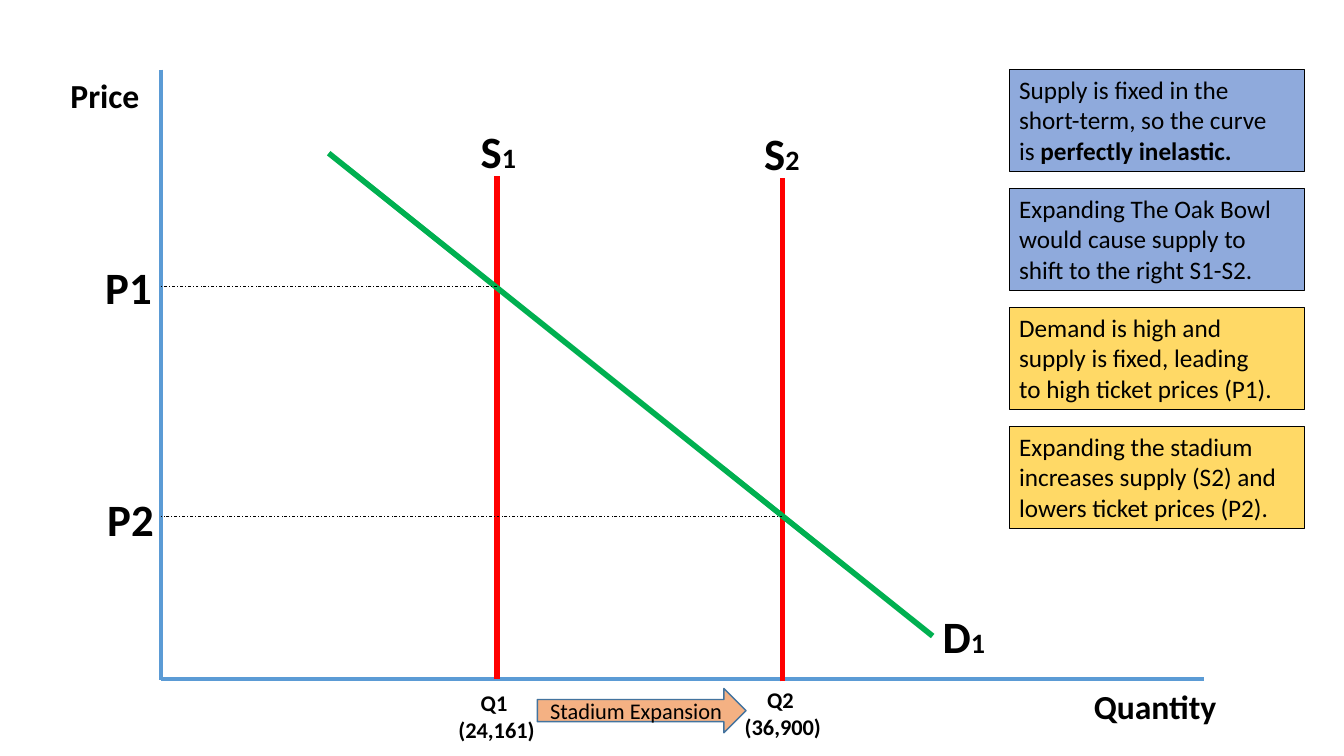
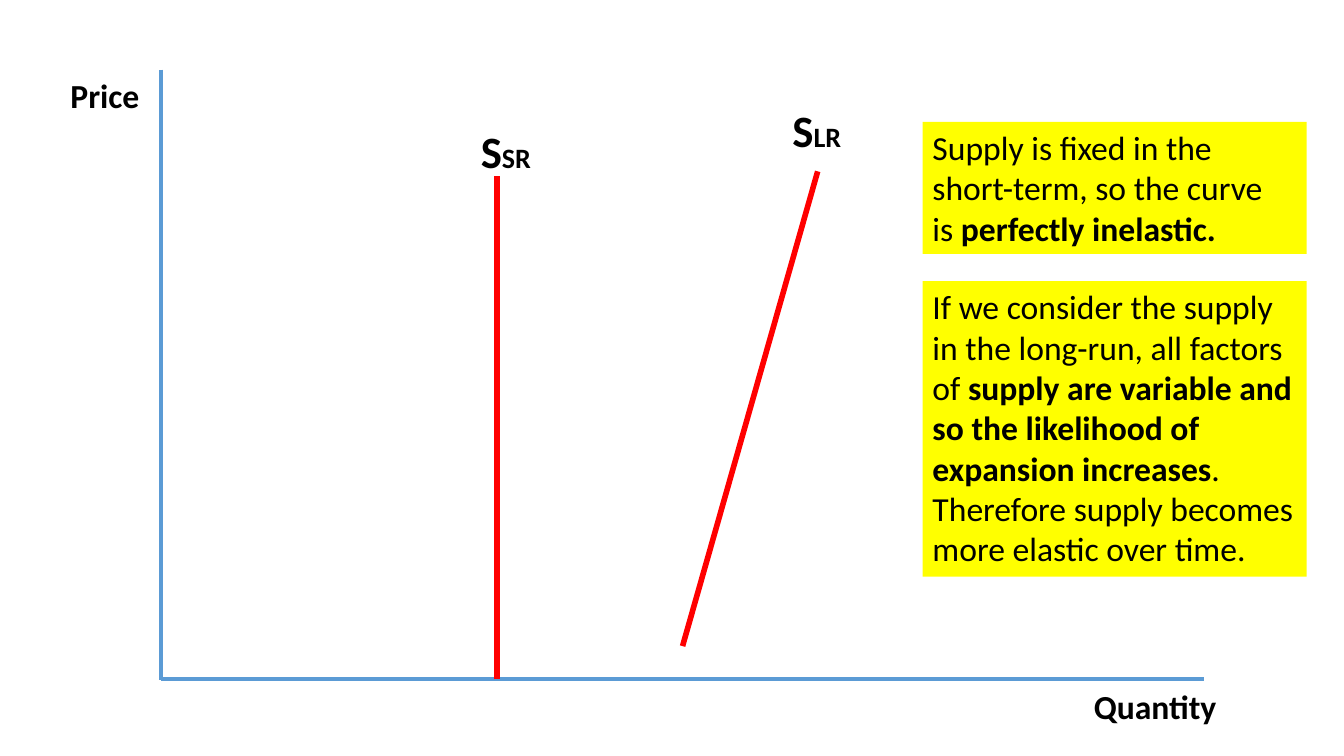
from pptx import Presentation
from pptx.dml.color import RGBColor
from pptx.enum.dml import MSO_LINE
from pptx.enum.shapes import MSO_CONNECTOR, MSO_SHAPE
from pptx.enum.text import MSO_ANCHOR, MSO_AUTO_SIZE, PP_ALIGN
from pptx.oxml.ns import qn
from pptx.util import Inches, Pt
from lxml import etree

STRAIGHT = MSO_CONNECTOR.STRAIGHT
RECT, RIGHT_ARROW = MSO_SHAPE.RECTANGLE, MSO_SHAPE.RIGHT_ARROW
LEFT, CENTER = PP_ALIGN.LEFT, PP_ALIGN.CENTER
TOP, MIDDLE = MSO_ANCHOR.TOP, MSO_ANCHOR.MIDDLE
GROW, FIXED = MSO_AUTO_SIZE.SHAPE_TO_FIT_TEXT, MSO_AUTO_SIZE.NONE
DASH_DOT = MSO_LINE.DASH_DOT

FONT = "Calibri"
BLACK = RGBColor(0x00, 0x00, 0x00)
AXIS_BLUE = RGBColor(0x5B, 0x9B, 0xD5)
SUPPLY_RED = RGBColor(0xFF, 0x00, 0x00)
DEMAND_GREEN = RGBColor(0x00, 0xB0, 0x50)
ARROW_ORANGE = RGBColor(0xF4, 0xB1, 0x83)
ARROW_EDGE = RGBColor(0x43, 0x73, 0x9E)
NOTE_BLUE = RGBColor(0x8F, 0xAA, 0xDC)
NOTE_GOLD = RGBColor(0xFF, 0xD9, 0x66)
NOTE_YELLOW = RGBColor(0xFF, 0xFF, 0x00)

AXIS_X, AXIS_TOP, AXIS_Y, AXIS_RIGHT = 1.6, 0.69, 6.74, 11.94
Q1_X, Q2_X = 4.93, 7.76
P1_Y, P2_Y = 2.84, 5.12
DEMAND = ((9.25, 6.31), (3.26, 1.52))
LONG_RUN = ((6.77, 6.41), (8.11, 1.7))

INELASTIC = [("Supply is fixed in the\nshort-term, so the curve\nis ", False),
             ("perfectly inelastic.", True)]
MARKET_NOTES = [
    (NOTE_BLUE, INELASTIC),
    (NOTE_BLUE, [("Expanding The Oak Bowl would cause supply to shift to the right S1-S2.", False)]),
    (NOTE_GOLD, [("Demand is high and\nsupply is fixed, leading\nto high ticket prices (P1).", False)]),
    (NOTE_GOLD, [("Expanding the stadium\nincreases supply (S2) and lowers ticket prices (P2).", False)]),
]
LONG_RUN_NOTES = [
    (1.21, 1.31, INELASTIC),
    (2.79, 2.93, [("If we consider the supply in the long-run, all factors of ", False),
                  ("supply are variable and so the likelihood of expansion increases", True),
                  (". Therefore supply becomes more elastic over time.", False)]),
]
MARKET_CURVES = [("S", "1", 4.67, 1.18, 0.56), ("S", "2", 7.48, 1.2, 0.56),
                 ("D", "1", 9.25, 5.99, 0.63)]
SUPPLY_CURVES = [("S", "SR", 4.67, 1.18, 0.71), ("S", "LR", 7.76, 0.97, 0.69)]
PRICES = [("P1", 0.94, 2.53, Q1_X, P1_Y), ("P2", 0.96, 4.83, Q2_X, P2_Y)]
QUANTITIES = [("Q1 \n(24,161)", 4.44, 6.79), ("Q2 \n(36,900)", 7.28, 6.76)]


def write(shape, runs, align=LEFT, anchor=TOP, wrap=True, fit=GROW):
    tf = shape.text_frame
    tf.word_wrap, tf.auto_size, tf.vertical_anchor = wrap, fit, anchor
    p = tf.paragraphs[0]
    p.alignment = align
    for text, size, bold in runs:
        for i, line in enumerate(text.split("\n")):
            if i:
                p.add_line_break()
            r = p.add_run()
            r.text = line
            r.font.name, r.font.size, r.font.bold = FONT, Pt(size), bold
            r.font.color.rgb = BLACK


def add_label(s, box, *runs, align=LEFT):
    shape = s.shapes.add_textbox(*map(Inches, box))
    write(shape, [(text, size, True) for text, size in runs], align=align, wrap=False)


def add_box(s, box, fill, runs, kind=RECT, edge=None, width=0.75, **text_format):
    shape = s.shapes.add_shape(kind, *map(Inches, box))
    shape.shadow.inherit = False
    shape.fill.solid()
    shape.fill.fore_color.rgb = fill
    if edge is None:
        shape.line.fill.background()
    else:
        shape.line.color.rgb = edge
        shape.line.width = Pt(width)
    write(shape, runs, **text_format)


def add_line(s, start, end, color, width, dash=None):
    line = s.shapes.add_connector(STRAIGHT, *map(Inches, (*start, *end)))
    line.line.color.rgb = color
    line.line.width = Pt(width)
    if dash:
        line.line.dash_style = dash
    etree.SubElement(line._element.spPr, qn("a:effectLst"))


def add_curve_labels(s, curves):
    for name, index, x, y, w in curves:
        add_label(s, (x, y, w, 0.64), (name, 32), (index, 20))


def add_graph(prs):
    s = prs.slides.add_slide(prs.slide_layouts[6])
    add_line(s, (AXIS_X, AXIS_TOP), (AXIS_X, AXIS_Y + 0.01), AXIS_BLUE, 3)
    add_line(s, (AXIS_X, AXIS_Y), (AXIS_RIGHT, AXIS_Y), AXIS_BLUE, 3)
    add_line(s, (Q1_X, AXIS_Y), (Q1_X, 1.75), SUPPLY_RED, 4)
    add_label(s, (0.6, 0.69, 0.89, 0.5), ("Price", 24))
    add_label(s, (10.75, 6.76, 1.43, 0.5), ("Quantity", 24))
    return s


def build_market(prs):
    s = add_graph(prs)
    add_line(s, (Q2_X, 6.76), (Q2_X, 1.77), SUPPLY_RED, 4)
    add_line(s, *DEMAND, DEMAND_GREEN, 4)
    add_curve_labels(s, MARKET_CURVES)
    for text, x, y in QUANTITIES:
        add_label(s, (x, y, 0.97, 0.64), (text, 16), align=CENTER)
    for text, x, y, quantity_x, price_y in PRICES:
        add_line(s, (quantity_x, price_y), (AXIS_X, price_y), BLACK, 0.5, DASH_DOT)
        add_label(s, (x, y, 0.67, 0.64), (text, 32), align=CENTER)
    add_box(s, (5.33, 6.83, 2.07, 0.44), ARROW_ORANGE, [("Stadium Expansion", 16, False)],
            kind=RIGHT_ARROW, edge=ARROW_EDGE, width=1, align=CENTER, anchor=MIDDLE, fit=FIXED)
    for i, (fill, runs) in enumerate(MARKET_NOTES):
        add_box(s, (10.01, 0.69 + i * 1.18, 2.93, 1.01), fill,
                [(text, 18, bold) for text, bold in runs], edge=BLACK)


def build_long_run(prs):
    s = add_graph(prs)
    add_line(s, *LONG_RUN, SUPPLY_RED, 4)
    add_curve_labels(s, SUPPLY_CURVES)
    for y, h, runs in LONG_RUN_NOTES:
        add_box(s, (9.15, y, 3.81, h), NOTE_YELLOW,
                [(text, 24, bold) for text, bold in runs])


def main():
    prs = Presentation()
    prs.slide_width, prs.slide_height = Inches(13.33), Inches(7.5)
    build_market(prs)
    build_long_run(prs)
    prs.save("out.pptx")


if __name__ == "__main__":
    main()
